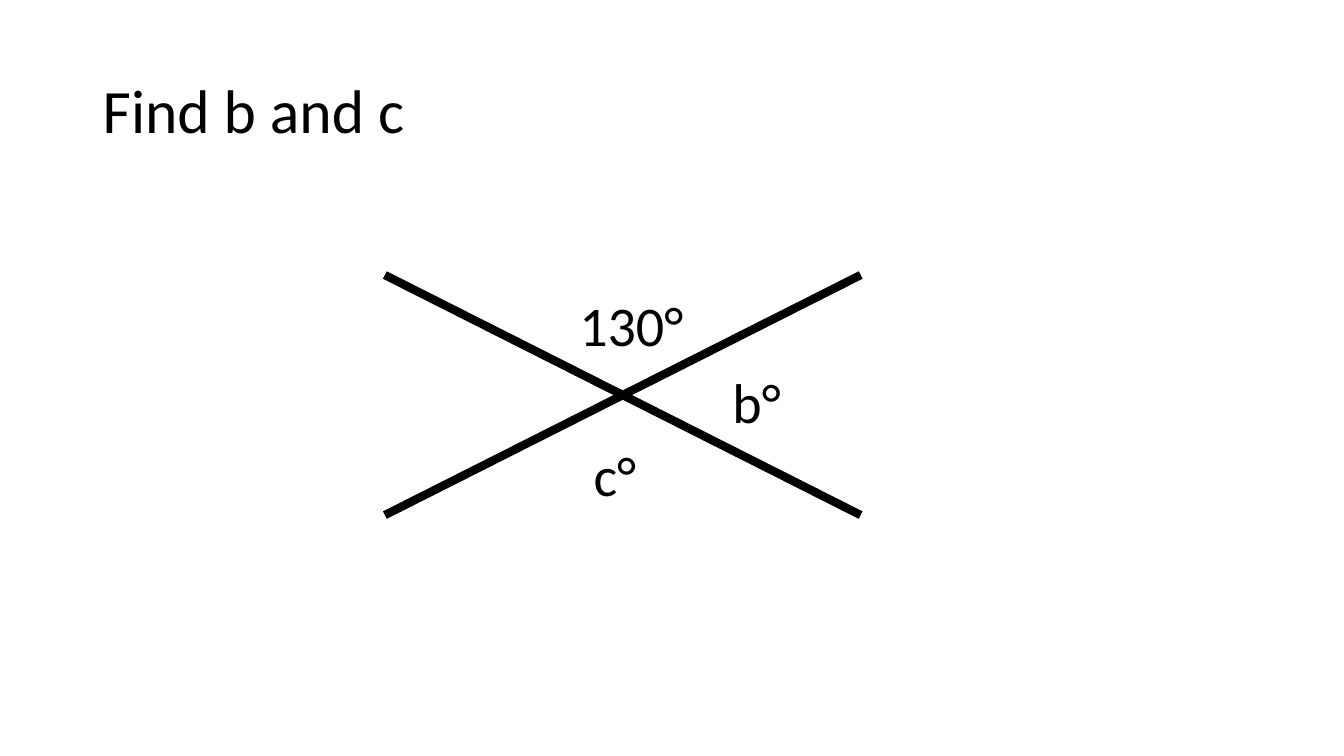
from pptx import Presentation
from pptx import util as u
from pptx.dml.color import RGBColor
from pptx.enum import shapes, text
from pptx.oxml.ns import qn
from lxml import etree

BLACK = RGBColor(0, 0, 0)
FONT = "Calibri"
LABEL_HEIGHT = 1.96


def add_text(s, words, left, top, width, height, size,
             anchor=text.MSO_ANCHOR.TOP, spacing=1.0):
    sp = s.shapes.add_textbox(u.Cm(left), u.Cm(top), u.Cm(width), u.Cm(height))
    tf = sp.text_frame
    tf.word_wrap = True
    tf.vertical_anchor = anchor
    p = tf.paragraphs[0]
    p.text = words
    p.line_spacing = spacing
    p.font.name = FONT
    p.font.size = u.Pt(size)
    p.font.color.rgb = BLACK
    return sp


def add_line(s, x1, y1, x2, y2):
    line = s.shapes.add_connector(shapes.MSO_CONNECTOR.STRAIGHT,
                                  u.Cm(x1), u.Cm(y1), u.Cm(x2), u.Cm(y2))
    line.line.color.rgb = BLACK
    line.line.width = u.Pt(6)
    etree.SubElement(line._element.spPr, qn("a:effectLst"))


def add_angle_label(s, words, left, top, width):
    sp = add_text(s, words, left, top, width, LABEL_HEIGHT, 40)
    sp.text_frame.auto_size = text.MSO_AUTO_SIZE.SHAPE_TO_FIT_TEXT


def main():
    prs = Presentation()
    prs.slide_width, prs.slide_height = u.Cm(33.87), u.Cm(19.05)
    s = prs.slides.add_slide(prs.slide_layouts[6])

    # Title
    add_text(s, "Find b and c", 2.34, 1.02, 29.21, 3.68, 44,
             text.MSO_ANCHOR.MIDDLE, 0.9)

    # Crossing lines
    left, top, right, bottom = 9.7, 6.93, 21.69, 12.98
    add_line(s, left, top, right, bottom)
    add_line(s, right, top, left, bottom)

    # Angle labels
    add_angle_label(s, "130°", 14.35, 7.19, 3.84)
    add_angle_label(s, "b°", 18.21, 9.14, 2.84)
    add_angle_label(s, "c°", 14.71, 10.97, 2.84)

    prs.save("out.pptx")


if __name__ == "__main__":
    main()
